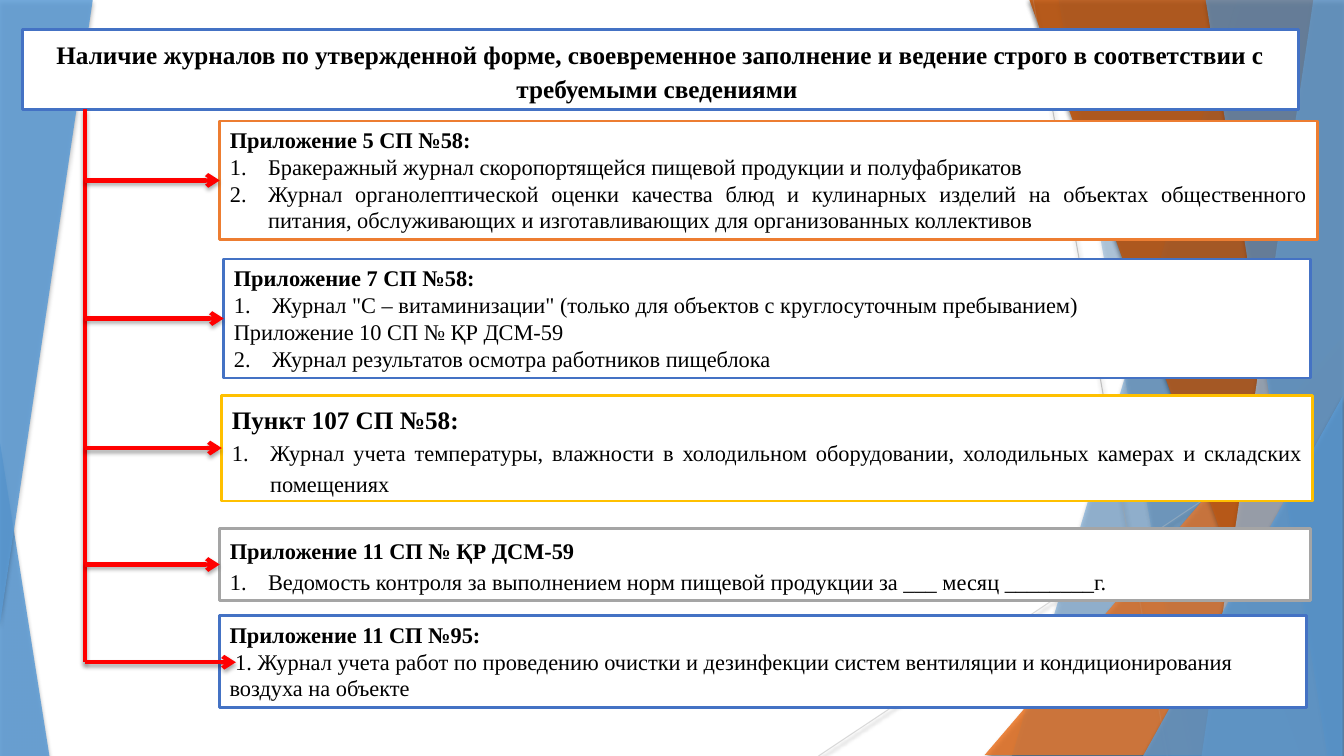
"""Build a slide that lists the required journals by sanitary rule."""
from lxml import etree
from pptx import Presentation, util as u
from pptx.dml.color import RGBColor
from pptx.enum import shapes, text
from pptx.oxml.ns import qn

WIDE, HIGH = u.Emu(12192000), u.Emu(6858000)
COLS, ROWS = 133.33, 75
HUES = {
    "white": "FFFFFF", "black": "000000", "red": "FF0000", "blue": "4472C4",
    "sky": "5B9BD5", "pale": "9DC3E6", "orange": "ED7D31", "rust": "C55A11",
    "gold": "FFC000", "grey": "A5A5A5", "silver": "BFBFBF", "mist": "D9D9D9",
}
WINGS = [
    ("band", (122.8, 100.4), "sky", 30),
    ("band", (105, 118.2), "sky", 20),
    ("peak", (97.7, 33.3, 35.6, 41.6), "orange", 72),
    ("band", (102.1, 129.1), "rust", 70),
    ("band", (130.3, 119.2), "pale", 70),
    ("band", (119.6, 131.7), "sky", 65),
    ("peak", (113.4, 39.3, 19.8, 35.7), "sky", 80),
]
HEAD = ("Наличие журналов по утвержденной форме, своевременное заполнение и ведение "
        "строго в соответствии с требуемыми сведениями ")
LISTS = [
    ((21.8, 12, 108.9, 11.8), "orange", 16, 1, [
        (0, "Приложение 5 СП №58:"),
        (1, "Бракеражный журнал скоропортящейся пищевой продукции и полуфабрикатов"),
        (2, "Журнал органолептической оценки качества блюд и кулинарных изделий на объектах "
            "общественного питания, обслуживающих и изготавливающих для организованных "
            "коллективов")]),
    ((22.2, 25.7, 107.8, 11.8), "blue", 16, 1, [
        (0, "Приложение 7 СП №58:"),
        (1, "Журнал \"С – витаминизации\" (только для объектов с круглосуточным пребыванием)"),
        (0, "Приложение 10 СП № ҚР ДСМ-59"),
        (2, "Журнал результатов осмотра работников пищеблока")]),
    ((22, 39.2, 108.2, 10.5), "gold", 18, 1.15, [
        (0, "Пункт 107 СП №58:"),
        (1, "Журнал учета температуры, влажности в холодильном оборудовании, холодильных "
            "камерах и складских помещениях")]),
    ((21.8, 52.4, 108.2, 7.2), "grey", 16, 1.15, [
        (0, "Приложение 11 СП № ҚР ДСМ-59"),
        (1, "Ведомость контроля за выполнением норм пищевой продукции за ___ месяц "
            "________г.")]),
]
LAST = [
    (0, "Приложение 11 СП №95:"),
    (0, " 1. Журнал учета работ по проведению очистки и дезинфекции систем вентиляции и "
        "кондиционирования воздуха на объекте"),
]


class Deck:
    """Hold the style and the current slide."""

    face = "Times New Roman"

    def __init__(self):
        self.show = Presentation()
        self.show.slide_width, self.show.slide_height = WIDE, HIGH
        self.slide = self.show.slides.add_slide(self.show.slide_layouts[4])
        self.items = self.slide.shapes

    def hue(self, name):
        return RGBColor.from_string(HUES[name])

    def grid(self, *cells):
        steps = WIDE / COLS, HIGH / ROWS
        return [u.Emu(round(cell * steps[i % 2])) for i, cell in enumerate(cells)]

    def shade(self, shape, alpha):
        root = etree.SubElement(shape.element.spPr, qn("a:effectLst"))
        cast = etree.SubElement(root, qn("a:outerShdw"), blurRad="38100", dist="25400",
                                dir="5400000", rotWithShape="0")
        tint = etree.SubElement(cast, qn("a:srgbClr"), val=HUES["black"])
        etree.SubElement(tint, qn("a:alpha"), val=str(alpha * 1000))

    def glass(self, shape, hue, alpha):
        shape.fill.solid()
        shape.fill.fore_color.rgb = self.hue(hue)
        tint = shape.element.spPr.find(".//" + qn("a:srgbClr"))
        etree.SubElement(tint, qn("a:alpha"), val=str(alpha * 1000))
        shape.line.fill.background()
        self.shade(shape, 35)

    def band(self, ends, hue, alpha):
        top, low = ends
        edge = [(top, -0.1), (COLS, -0.1), (COLS, ROWS), (low, ROWS)]
        pts = [self.grid(*pt) for pt in edge]
        pen = self.items.build_freeform(*pts[0], scale=1.0)
        pen.add_line_segments(pts[1:], close=True)
        self.glass(pen.convert_to_shape(), hue, alpha)

    def peak(self, area, hue, alpha, tip=1, turn=0):
        shape = self.items.add_shape(shapes.MSO_SHAPE.ISOSCELES_TRIANGLE, *self.grid(*area))
        shape.adjustments[0] = tip
        shape.rotation = turn
        self.glass(shape, hue, alpha)

    def line(self, ends, hue, width, arrow=False, box=None):
        wire = self.items.add_connector(shapes.MSO_CONNECTOR.STRAIGHT, *self.grid(*ends))
        wire.line.color.rgb = self.hue(hue)
        wire.line.width = u.Pt(width)
        if arrow:
            ln = wire.element.spPr.find(qn("a:ln"))
            etree.SubElement(ln, qn("a:tailEnd"), type="arrow")
        self.shade(wire, 35)
        if box is not None:
            wire.end_connect(box, 1)

    def frame(self, box, area, hue):
        self.items.element.append(box.element)
        box.left, box.top, box.width, box.height = self.grid(*area)
        box.fill.solid()
        box.fill.fore_color.rgb = self.hue("white")
        box.line.color.rgb = self.hue(hue)
        box.line.width = u.Pt(2)
        body = box.text_frame
        body.word_wrap = True
        body.auto_size = text.MSO_AUTO_SIZE.NONE
        body.vertical_anchor = text.MSO_ANCHOR.TOP
        body.margin_left = body.margin_right = u.Inches(0.1)
        body.margin_top = body.margin_bottom = u.Inches(0.05)
        return body

    def para(self, para, words, size, bold, space, align, num=0):
        para.text = words
        para.alignment = align
        para.line_spacing = space
        para.space_before = para.space_after = u.Pt(0)
        props = para._p.get_or_add_pPr()
        dent = u.Inches(0.38) if num else 0
        props.set("marL", str(dent))
        props.set("indent", str(-dent))
        if num:
            etree.SubElement(props, qn("a:buAutoNum"), type="arabicPeriod", startAt=str(num))
        else:
            etree.SubElement(props, qn("a:buNone"))
        font = para.font
        font.name, font.size, font.bold = self.face, u.Pt(size), bold
        font.color.rgb = self.hue("black")

    def title(self, area, hue, words):
        body = self.frame(self.items.title, area, hue)
        self.para(body.paragraphs[0], words, 18, True, 1.15, text.PP_ALIGN.CENTER)

    def card(self, box, area, hue, size, space, rows, align=text.PP_ALIGN.JUSTIFY):
        body = self.frame(box, area, hue)
        for i, (num, words) in enumerate(rows):
            para = body.add_paragraph() if i else body.paragraphs[0]
            self.para(para, words, 16 if i else size, i == 0, space, align, num)


def main():
    deck = Deck()
    draw = {"band": deck.band, "peak": deck.peak}
    for turn in range(2):
        for kind, area, hue, alpha in WINGS:
            draw[kind](area, hue, alpha)
        if turn == 0:
            deck.peak((0, 43.9, 4.9, 31.1), "sky", 85, tip=0)
            deck.line((102.5, 0, 115.8, ROWS), "silver", 0.75)
            deck.line((COLS, 40.3, 81.2, ROWS), "mist", 0.75)
    deck.peak((0, 0, 9.2, 61.9), "sky", 85, turn=180)

    deck.title((2.2, 2.9, 126.6, 8), "blue", HEAD)
    trunk = 8.4
    deck.line((trunk, 10.8, trunk, 65.7), "red", 3)
    slots = [deck.slide.placeholders[i] for i in range(1, 5)]
    for box, (area, hue, size, space, rows) in zip(slots, LISTS):
        deck.card(box, area, hue, size, space, rows)
        mid = area[1] + area[3] / 2
        deck.line((trunk, mid, area[0], mid), "red", 3, True, box)
    area = (21.8, 61.1, 107.8, 9.1)
    note = deck.items.add_textbox(*deck.grid(*area))
    deck.card(note, area, "blue", 16, 1, LAST, text.PP_ALIGN.LEFT)
    deck.line((trunk, 65.7, 23.4, 65.7), "red", 3, True)
    deck.show.save("out.pptx")


if __name__ == "__main__":
    main()
